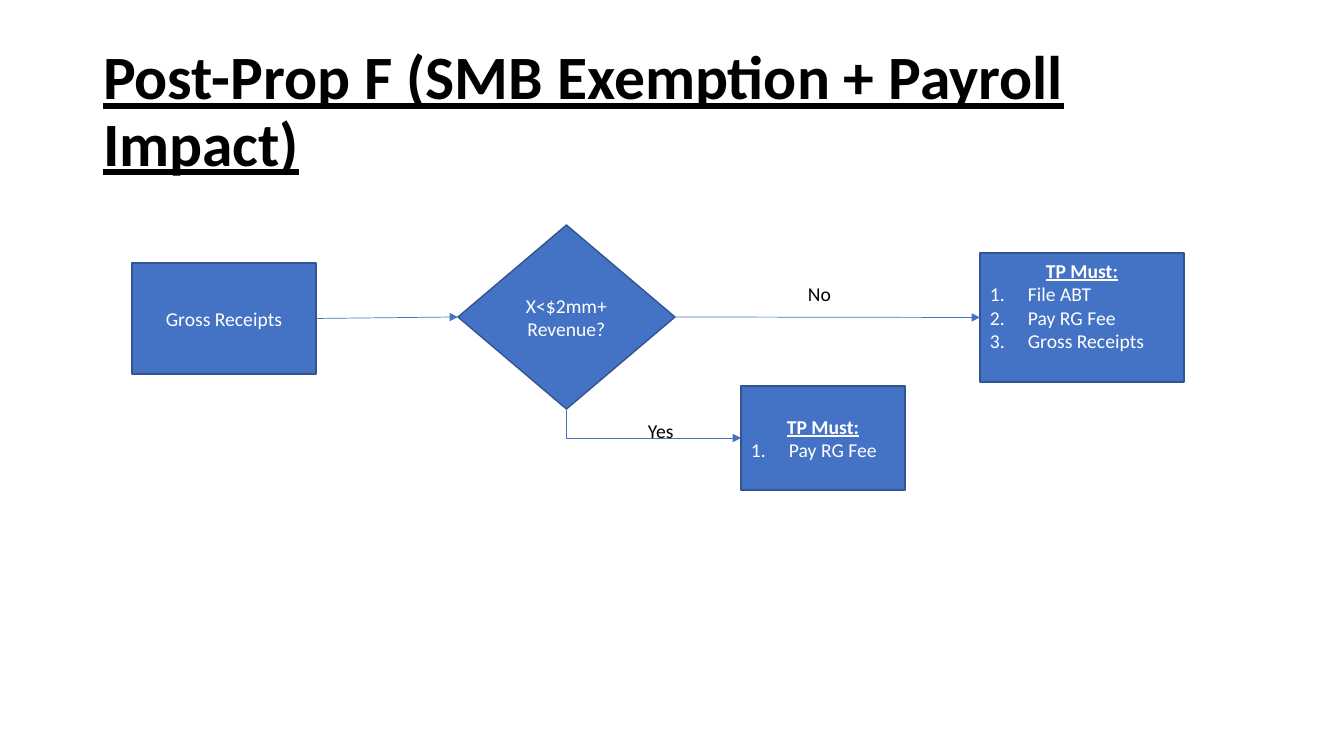
from dataclasses import dataclass

from lxml import etree
from pptx import Presentation
from pptx import util as u
from pptx.dml.color import RGBColor
from pptx.enum import shapes, text
from pptx.oxml.ns import qn

# Content: places are left, top, width, height in px
TITLE = ("Post-Prop F (SMB Exemption + Payroll Impact)", (93, 40, 1159, 146))
STEPS = {
    "receipts": ("RECTANGLE", (132, 263, 184, 111), "Gross Receipts", []),
    "test": ("DIAMOND", (458, 225, 217, 184), "X<$2mm+ Revenue?", []),
    "large": ("RECTANGLE", (980, 253, 204, 129), "TP Must:",
              ["File ABT", "Pay RG Fee", "Gross Receipts"]),
    "small": ("RECTANGLE", (741, 386, 164, 104), "TP Must:", ["Pay RG Fee"]),
}
LABELS = [("No", (798, 277, 50, 34), True), ("Yes", (638, 414, 46, 34), False)]
STRAIGHT_LINKS = [("receipts", "test"), ("test", "large")]
BENT_LINK = ("test", "small")
LARGE_BOTTOM_INSET = 29
LIST_INDENT = 38

PX = 914400 / 100.8
TOP, LEFT, BOTTOM, RIGHT = range(4)


@dataclass
class Theme:
    font: str = "Calibri"
    title_size: int = 44
    body_size: int = 14
    fill: str = "4472C4"
    outline: str = "325491"
    ink: str = "000000"
    light: str = "FFFFFF"


theme = Theme()


def px(length):
    return u.Emu(round(length * PX))


def style(para, size, color, strong=False):
    for span in para.runs:
        span.font.name = theme.font
        span.font.size = u.Pt(size)
        span.font.color.rgb = RGBColor.from_string(color)
        span.font.bold = span.font.underline = strong


def number(para):
    props = para._p.get_or_add_pPr()
    props.set("marL", str(px(LIST_INDENT)))
    props.set("indent", str(-px(LIST_INDENT)))
    etree.SubElement(props, qn("a:buFont"), typeface="+mj-lt")
    etree.SubElement(props, qn("a:buAutoNum"), type="arabicPeriod")


def add_step(page, kind, place, heading, items):
    box = page.shapes.add_shape(shapes.MSO_SHAPE[kind], *map(px, place))
    box.shadow.inherit = False
    box.fill.solid()
    box.fill.fore_color.rgb = RGBColor.from_string(theme.fill)
    box.line.color.rgb = RGBColor.from_string(theme.outline)
    box.line.width = u.Pt(1)
    frame = box.text_frame
    frame.word_wrap = True
    frame.vertical_anchor = text.MSO_ANCHOR.MIDDLE
    frame.text = "\n".join([heading, *items])
    for index, para in enumerate(frame.paragraphs):
        is_heading = index == 0
        para.alignment = text.PP_ALIGN.CENTER if is_heading else text.PP_ALIGN.LEFT
        style(para, theme.body_size, theme.light, is_heading and bool(items))
        if not is_heading:
            number(para)
    return box


def add_link(page, kind, start, start_side, end):
    link = page.shapes.add_connector(kind, 0, 0, 0, 0)
    link.begin_connect(start, start_side)
    link.end_connect(end, LEFT)
    link.line.color.rgb = RGBColor.from_string(theme.fill)
    link.line.width = u.Pt(0.5)
    etree.SubElement(link.line._get_or_add_ln(), qn("a:tailEnd"), type="triangle")
    etree.SubElement(link._element.spPr, qn("a:effectLst"))
    return link


def bend_once(link):
    """Turn an elbow link into one corner: down, then right."""
    across, down = link.width, link.height
    middle_x, middle_y = link.left + across // 2, link.top + down // 2
    link.left, link.top = middle_x - down // 2, middle_y - across // 2
    link.width, link.height = down, across
    props = link._element.spPr
    props.find(qn("a:prstGeom")).set("prst", "bentConnector2")
    frame = props.find(qn("a:xfrm"))
    frame.set("rot", str(270 * 60000))
    frame.set("flipH", "1")


def main():
    deck = Presentation()
    deck.slide_width, deck.slide_height = px(1344), px(756)
    page = deck.slides.add_slide(deck.slide_layouts[5])

    # Title
    wording, place = TITLE
    title = page.shapes.title
    title.left, title.top, title.width, title.height = map(px, place)
    frame = title.text_frame
    frame.text = wording
    frame.word_wrap = True
    frame.auto_size = text.MSO_AUTO_SIZE.NONE
    frame.vertical_anchor = text.MSO_ANCHOR.MIDDLE
    para = frame.paragraphs[0]
    para.alignment = text.PP_ALIGN.LEFT
    para.line_spacing = 0.9
    style(para, theme.title_size, theme.ink, True)

    # Steps
    boxes = {name: add_step(page, *step) for name, step in STEPS.items()}
    boxes["large"].text_frame.margin_bottom = px(LARGE_BOTTOM_INSET)

    # Links
    for start, end in STRAIGHT_LINKS:
        add_link(page, shapes.MSO_CONNECTOR.STRAIGHT, boxes[start], RIGHT, boxes[end])
    start, end = BENT_LINK
    bend_once(add_link(page, shapes.MSO_CONNECTOR.ELBOW, boxes[start], BOTTOM, boxes[end]))

    # Answers
    for wording, place, wrap in LABELS:
        label = page.shapes.add_textbox(*map(px, place))
        label.text_frame.text = wording
        label.text_frame.word_wrap = wrap
        label.text_frame.auto_size = text.MSO_AUTO_SIZE.SHAPE_TO_FIT_TEXT
        style(label.text_frame.paragraphs[0], theme.body_size, theme.ink)

    deck.save("out.pptx")


if __name__ == "__main__":
    main()
